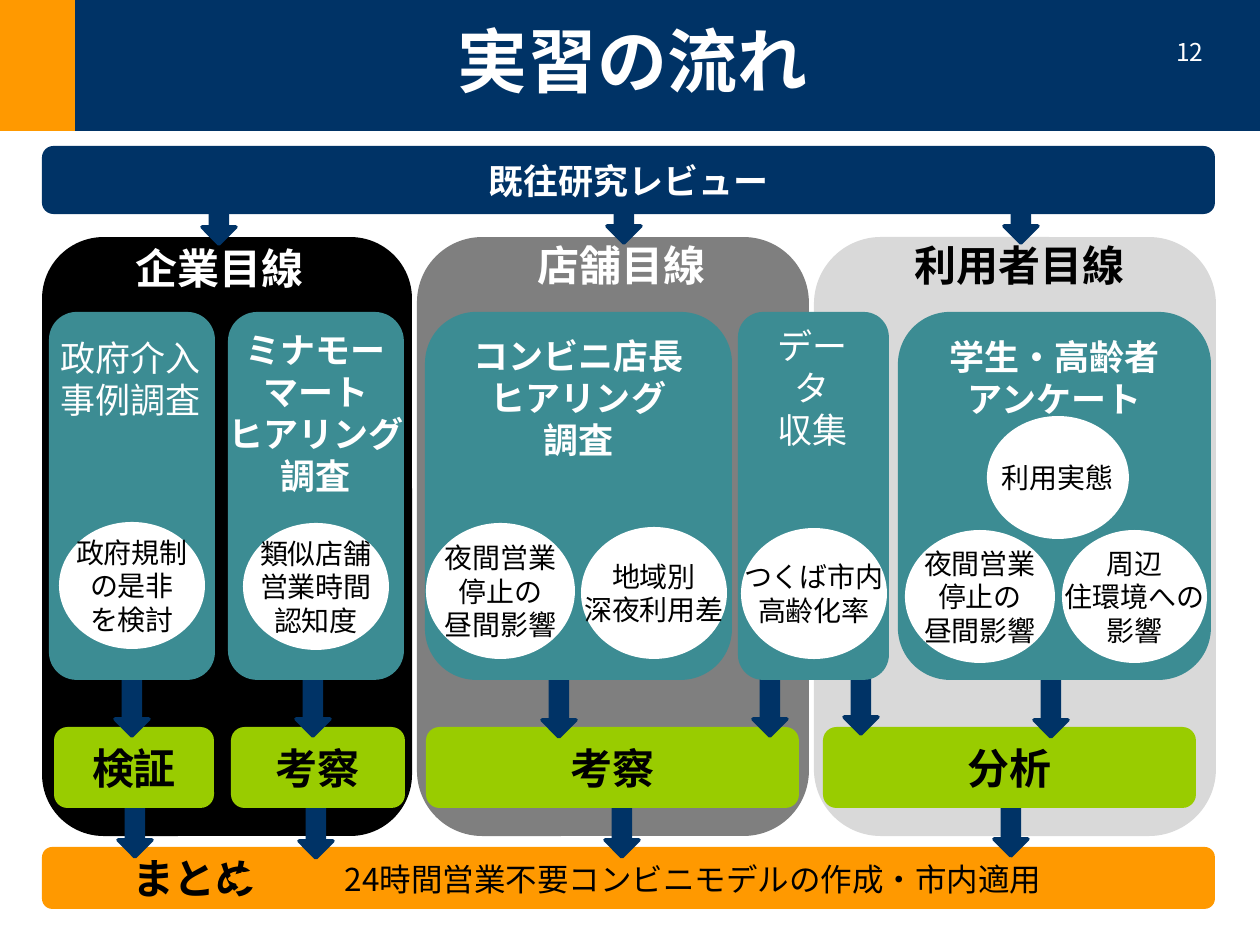
"""Builds the slide showing the flow of the field study."""
import pptx
import pptx.util
import pptx.dml.color
import pptx.enum.shapes
import pptx.enum.text
import pptx.oxml.ns
import lxml.etree

RGB = pptx.dml.color.RGBColor
KIND = pptx.enum.shapes.MSO_SHAPE
ALIGN = pptx.enum.text.PP_ALIGN
ANCHOR = pptx.enum.text.MSO_ANCHOR

NAVY = RGB(0x00, 0x33, 0x66)
ORANGE = RGB(0xFF, 0x99, 0x00)
TEAL = RGB(0x3C, 0x8C, 0x93)
LIME = RGB(0x99, 0xCC, 0x00)
GRAY = RGB(0x7F, 0x7F, 0x7F)
PALE = RGB(0xD9, 0xD9, 0xD9)
BLACK = RGB(0x00, 0x00, 0x00)
WHITE = RGB(0xFF, 0xFF, 0xFF)

FONT = "Noto Sans CJK JP"
SCALE = 914400 // 126

TITLE = "実習の流れ"
NUMBER = "12"
REVIEW = "既往研究レビュー"
SUMMARY = "まとめ"
MODEL = "24時間営業不要コンビニモデルの作成・市内適用"

PANELS = [(42, 370, BLACK), (417, 392, GRAY), (814, 402, PALE)]
VIEWS = [
    ("企業目線", (71, 242, 297, 52), WHITE),
    ("店舗目線", (524, 233, 195, 63), WHITE),
    ("利用者目線", (845, 241, 350, 48), BLACK),
]
STUDIES = [
    ("", 49, 166),
    ("ミナモー\nマート\nヒアリング\n調査", 228, 176),
    ("コンビニ店長\nヒアリング\n調査", 425, 307),
    ("", 738, 151),
    ("学生・高齢者\nアンケート", 898, 313),
]
NOTES = [
    ("政府介入\n事例調査", (48, 330, 166, 97), ALIGN.LEFT, False),
    ("データ\n収集", (752, 318, 121, 97), ALIGN.CENTER, True),
]
TOPICS = [
    ("政府規制\nの是非\nを検討", (59, 522, 146, 127)),
    ("類似店舗\n営業時間\n認知度", (243, 523, 146, 127)),
    ("夜間営業\n停止の\n昼間影響", (426, 523, 149, 136)),
    ("地域別\n深夜利用差", (581, 527, 146, 132)),
    ("つくば市内\n高齢化率", (741, 528, 146, 131)),
    ("利用実態", (987, 416, 142, 123)),
    ("夜間営業\n停止の\n昼間影響", (905, 530, 150, 133)),
    ("周辺\n住環境への\n影響", (1062, 530, 145, 133)),
]
RESULTS = [("検証", 54, 160), ("考察", 231, 174), ("考察", 426, 373), ("分析", 823, 373)]
STARTS = [(202, 244), (607, 243), (1004, 243)]
MIDDLES = [(115, 736), (296, 736), (542, 737), (753, 736), (844, 734), (1034, 737)]
ENDS = [(118, 857), (299, 858), (605, 857), (994, 856)]


def place(item, box):
    item.left, item.top, item.width, item.height = [n * SCALE for n in box]


def write(item, text, size, color, bold=False, align=ALIGN.CENTER,
          anchor=ANCHOR.MIDDLE, wrap=False):
    frame = item.text_frame
    frame.text = text
    frame.word_wrap = wrap
    frame.vertical_anchor = anchor
    for line in frame.paragraphs:
        line.alignment = align
        for run in line.runs:
            run.font.size = pptx.util.Pt(size)
            run.font.bold = bold
            run.font.name = FONT
            run.font.color.rgb = color
            east = lxml.etree.SubElement(run.font._element, pptx.oxml.ns.qn("a:ea"))
            east.set("typeface", FONT)


def draw(slide, kind, box, fill):
    item = slide.shapes.add_shape(kind, *[n * SCALE for n in box])
    item.shadow.inherit = False
    item.fill.solid()
    item.fill.fore_color.rgb = fill
    item.line.fill.background()
    return item


def label(slide, text, box, size, color, **style):
    item = slide.shapes.add_textbox(*[n * SCALE for n in box])
    write(item, text, size, color, **style)


def point(slide, spots, top):
    for left, end in spots:
        item = draw(slide, KIND.DOWN_ARROW, (left, top, 34, end - top), NAVY)
        item.line.color.rgb = NAVY
        item.line.width = pptx.util.Pt(2)


def main():
    deck = pptx.Presentation()
    deck.slide_width, deck.slide_height = 1260 * SCALE, 945 * SCALE
    slide = deck.slides.add_slide(deck.slide_layouts[5])
    title = slide.shapes.title

    draw(slide, KIND.RECTANGLE, (0, -4, 1265, 135), NAVY)
    draw(slide, KIND.RECTANGLE, (0, -4, 75, 135), ORANGE)
    slide.shapes._spTree.append(title._element)
    place(title, (0, 11, 1265, 97))
    write(title, TITLE, 40, WHITE, bold=True, wrap=True)
    label(slide, NUMBER, (922, 31, 294, 66), 14, WHITE,
          align=ALIGN.RIGHT, anchor=ANCHOR.TOP, wrap=True)

    band = draw(slide, KIND.ROUNDED_RECTANGLE, (42, 847, 1173, 62), ORANGE)
    write(band, SUMMARY, 24, BLACK, bold=True, align=ALIGN.LEFT, wrap=True)
    band.text_frame.margin_left = 87 * SCALE
    for left, width, fill in PANELS:
        draw(slide, KIND.ROUNDED_RECTANGLE, (left, 237, width, 599), fill)
    point(slide, STARTS, 200)
    bar = draw(slide, KIND.ROUNDED_RECTANGLE, (42, 146, 1173, 68), NAVY)
    write(bar, REVIEW, 20, WHITE, bold=True)
    for text, box, color in VIEWS:
        label(slide, text, box, 24, color, bold=True)

    model = draw(slide, KIND.OVAL, (228, 853, 930, 52), ORANGE)
    write(model, MODEL, 18, BLACK)
    point(slide, ENDS, 800)
    for text, left, width in RESULTS:
        item = draw(slide, KIND.ROUNDED_RECTANGLE, (left, 727, width, 81), LIME)
        write(item, text, 24, BLACK, bold=True)
    point(slide, MIDDLES, 679)
    for text, left, width in STUDIES:
        item = draw(slide, KIND.ROUNDED_RECTANGLE, (left, 312, width, 368), TEAL)
        if text:
            write(item, text, 20, WHITE, bold=True, anchor=ANCHOR.TOP)
            item.text_frame.margin_top = 8 * SCALE
    for text, box, align, wrap in NOTES:
        label(slide, text, box, 20, WHITE, align=align, anchor=ANCHOR.TOP, wrap=wrap)
    for text, box in TOPICS:
        item = draw(slide, KIND.OVAL, box, WHITE)
        write(item, text, 16, BLACK)
    deck.save("out.pptx")


if __name__ == "__main__":
    main()
